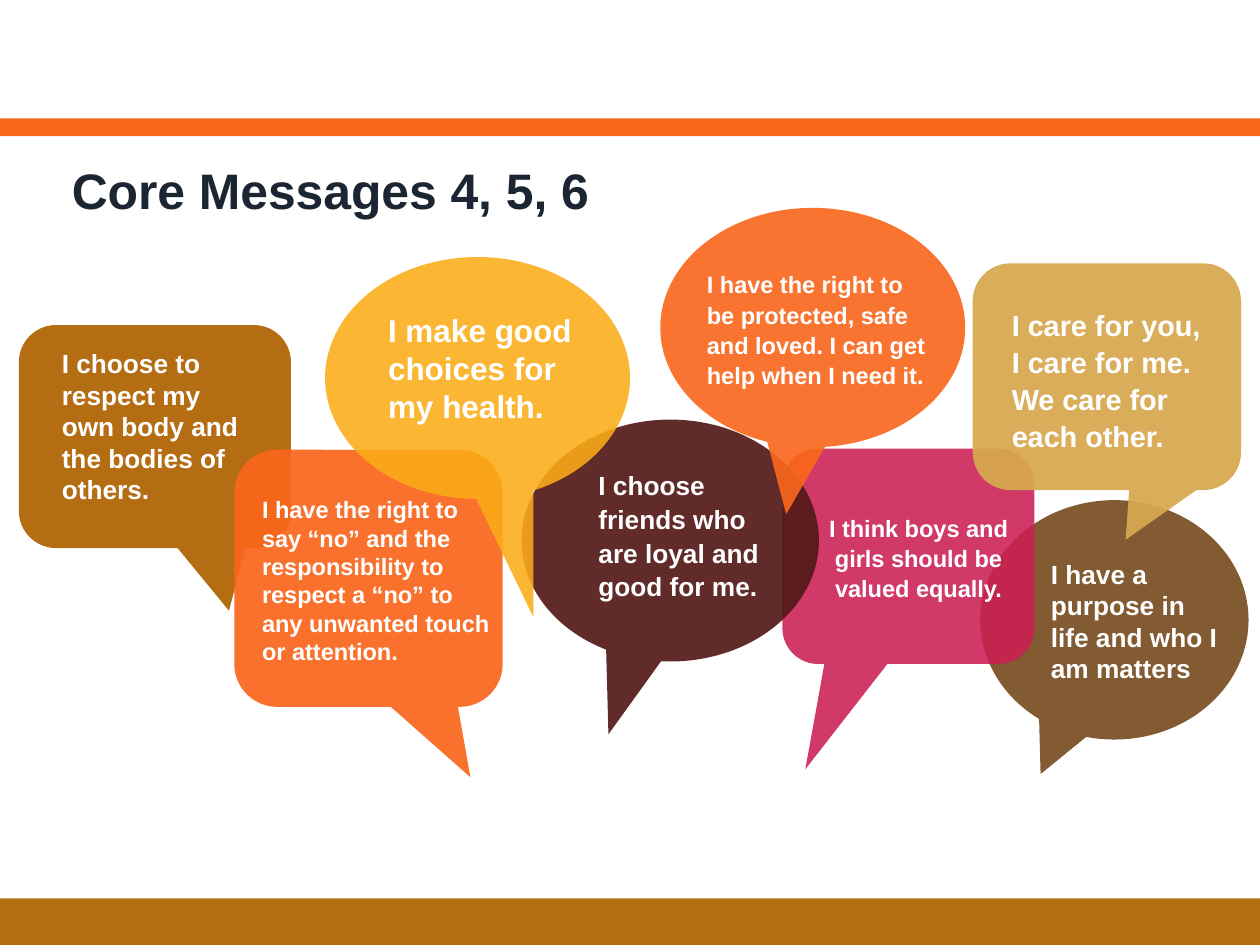
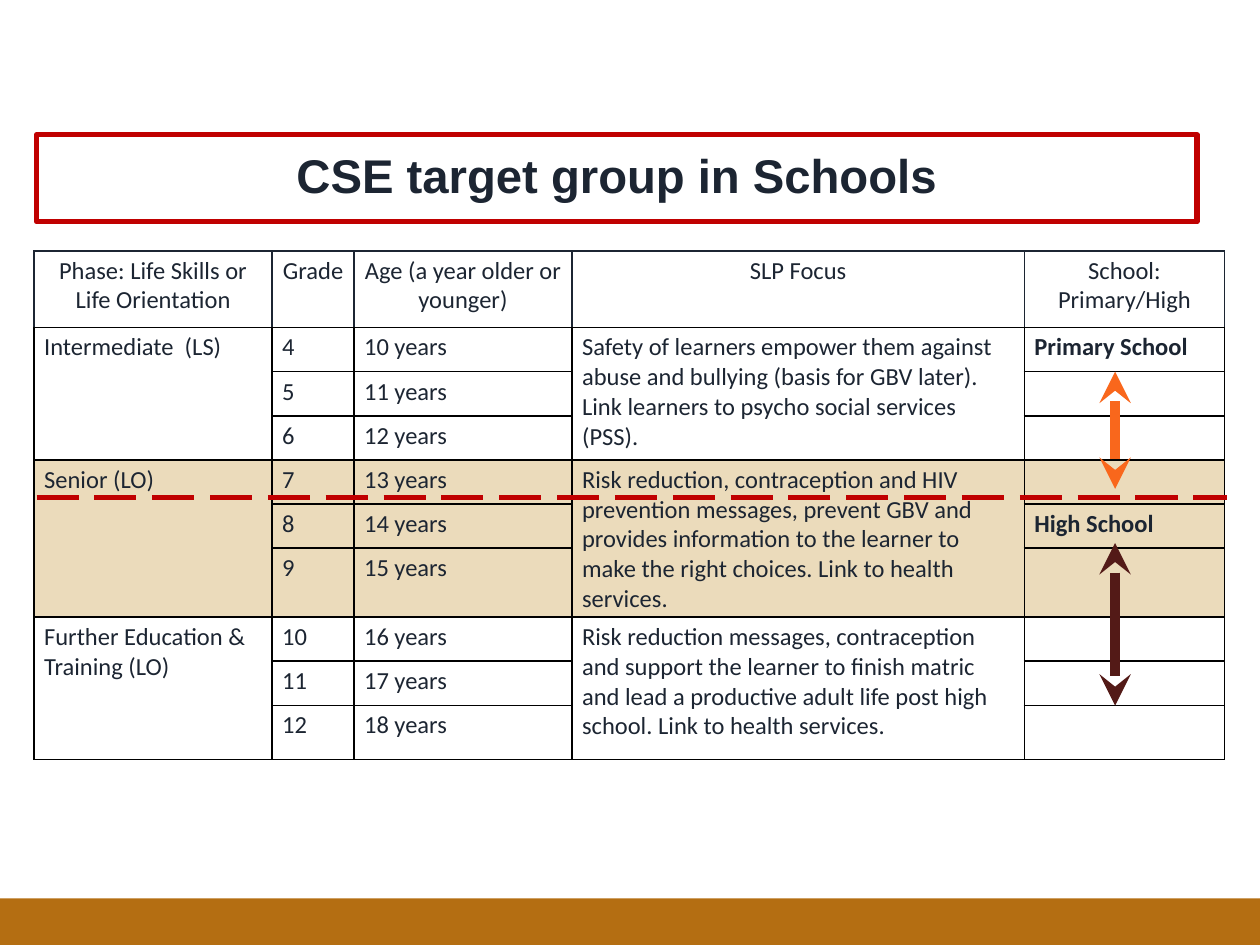
from pptx import Presentation
from pptx.dml.color import RGBColor
from pptx.enum.dml import MSO_LINE
from pptx.enum.shapes import MSO_CONNECTOR, MSO_SHAPE as SHAPE
from pptx.enum.text import MSO_ANCHOR as ANCHOR, PP_ALIGN as ALIGN
from pptx.oxml.ns import qn
from pptx.util import Inches, Pt
from lxml.etree import SubElement

# Shared colours
WHITE = RGBColor(0xFF, 0xFF, 0xFF)
BLACK = RGBColor(0x00, 0x00, 0x00)
INK = RGBColor(0x1C, 0x25, 0x32)
FOOTER = RGBColor(0xB4, 0x6E, 0x12)
OCHRE = RGBColor(0xB4, 0x6D, 0x13)
ORANGE = RGBColor(0xF9, 0x67, 0x1C)
BROWN = RGBColor(0x82, 0x5B, 0x32)
PINK = RGBColor(0xCB, 0x1F, 0x54)
SAND = RGBColor(0xD8, 0xA8, 0x51)
MAROON = RGBColor(0x53, 0x1A, 0x17)
YELLOW = RGBColor(0xFB, 0xAC, 0x18)
RED = RGBColor(0xC0, 0x00, 0x00)
CREAM = RGBColor(0xEB, 0xDB, 0xBB)

# Speech bubbles, back to front: shape, box, pointer tip, colour, opacity %
OVAL, ROUND = SHAPE.OVAL_CALLOUT, SHAPE.ROUNDED_RECTANGULAR_CALLOUT
BUBBLES = [
    (OVAL, (7.78, 3.97, 2.13, 1.9), (-0.275, 0.644), BROWN, 100),
    (ROUND, (0.15, 2.58, 2.16, 1.77), (0.272, 0.781), OCHRE, 100),
    (ROUND, (1.86, 3.57, 2.13, 2.04), (0.38, 0.774), ORANGE, 93),
    (ROUND, (6.21, 3.56, 2, 1.71), (-0.409, 0.989), PINK, 88),
    (ROUND, (7.72, 2.09, 2.13, 1.8), (0.07, 0.719), SAND, 94),
    (OVAL, (4.14, 3.33, 2.36, 1.92), (-0.208, 0.801), MAROON, 92),
    (OVAL, (5.24, 1.65, 2.42, 1.9), (-0.087, 0.78), ORANGE, 91),
    (OVAL, (2.58, 2.04, 2.42, 1.92), (0.183, 0.988), YELLOW, 88),
]
# Messages: box, size, line spacing, alignment, text
MESSAGES = [
    ((0.42, 2.72, 1.61, 1.57), 15, 1, ALIGN.LEFT,
     "I choose to respect my own body and the bodies of others."),
    ((2.01, 3.89, 2, 1.92), 13.5, 1, ALIGN.LEFT,
     "I have the right to say “no” and the responsibility to respect "
     "a “no” to any unwanted touch or attention."),
    ((3.01, 2.43, 1.64, 0.98), 18, 1, ALIGN.LEFT,
     "I make good choices for my health."),
    ((4.68, 3.67, 1.64, 1.16), 15, 1.07, ALIGN.LEFT,
     "I choose friends who are loyal and good for me."),
    ((5.54, 2.09, 1.96, 1.05), 13.5, 1.07, ALIGN.LEFT,
     "I have the right to be protected, safe and loved. I can get help when I need it."),
    ((6.47, 4.02, 1.64, 0.81), 13.5, 1.07, ALIGN.CENTER,
     "I think boys and girls should be valued equally."),
    ((7.96, 2.38, 1.95, 1.59), 16.5, 1.07, ALIGN.LEFT,
     "I care for you,\nI care for me. We care for each other."),
    ((8.27, 4.39, 1.49, 1.31), 15, 1, ALIGN.LEFT,
     "I have a purpose in life and who I am matters"),
]

# Target group table: each phase spans three grades
HEADERS = ["Phase: Life Skills or Life Orientation", "Grade",
           "Age (a year older or younger)", "SLP Focus", "School: Primary/High"]
PHASES = [
    ("Intermediate  (LS)",
     "Safety of learners empower them against abuse and bullying (basis for GBV "
     "later). Link learners to psycho social services (PSS).", None),
    ("Senior (LO)",
     "Risk reduction, contraception and HIV prevention messages, prevent GBV and "
     "provides information to the learner to make the right choices. Link to "
     "health services.", CREAM),
    ("Further Education & Training (LO)",
     "Risk reduction messages, contraception and support the learner to finish "
     "matric and lead a productive adult life post high school. Link to health "
     "services.", None),
]
FIRST_GRADE, AGE_GAP, SPAN = 4, 6, 3
SCHOOLS = {4: "Primary School", 8: "High School"}
COL_WIDTHS = [1.89, 0.65, 1.73, 3.59, 1.59]
ROW_HEIGHTS = [0.61, 0.35, 0.35, 0.35, 0.35, 0.35, 0.43, 0.35, 0.35, 0.43]
SCHOOL_ARROWS = [(2.95, 3.88, ORANGE), (4.31, 5.6, MAROON)]


def inches(box):
    return [Inches(v) for v in box]


def add_run(p, text, size, color, bold=False, font="Arial"):
    r = p.add_run()
    r.text = text
    r.font.name, r.font.size, r.font.bold = font, Pt(size), bold
    r.font.color.rgb = color


def add_filled(s, kind, box, color):
    sp = s.shapes.add_shape(kind, *inches(box))
    sp.shadow.inherit = False
    sp.fill.solid()
    sp.fill.fore_color.rgb = color
    sp.line.fill.background()
    return sp


def add_text(s, box, text, size, color, spacing=1, align=ALIGN.LEFT, anchor=ANCHOR.TOP):
    sp = s.shapes.add_textbox(*inches(box))
    tf = sp.text_frame
    tf.word_wrap = True
    tf.vertical_anchor = anchor
    tf.margin_left = tf.margin_right = Inches(0.07)
    tf.margin_top = tf.margin_bottom = Inches(0.04)
    p = tf.paragraphs[0]
    p.alignment, p.line_spacing = align, spacing
    for i, line in enumerate(text.split("\n")):
        if i:
            p.add_line_break()
        add_run(p, line, size, color, bold=True)
    return sp


def add_title(s, box, text, size, **kw):
    return add_text(s, box, text, size, INK, 0.9, **kw)


def add_line(s, start, end, color, width):
    ln = s.shapes.add_connector(MSO_CONNECTOR.STRAIGHT, *inches(start + end))
    ln.line.color.rgb, ln.line.width = color, Pt(width)
    SubElement(ln._element.spPr, qn("a:effectLst"))
    return ln


def new_slide(prs):
    s = prs.slides.add_slide(prs.slide_layouts[6])
    add_filled(s, SHAPE.RECTANGLE, (0, 7.13, 10, 0.38), FOOTER)
    return s


def fill_cell(cell, text, align=ALIGN.LEFT, bold=False, fill=None, border=BLACK):
    cell.margin_left = cell.margin_right = Inches(0.08)
    cell.margin_top = cell.margin_bottom = Inches(0.04)
    p = cell.text_frame.paragraphs[0]
    p.alignment = align
    if text:
        add_run(p, text, 14, INK, bold, "Calibri")
    else:
        SubElement(p._p, qn("a:endParaRPr"), sz="1400")
    # Borders come before the fill in the cell properties
    tc_pr = cell._tc.get_or_add_tcPr()
    for side in ("lnL", "lnR", "lnT", "lnB"):
        ln = SubElement(tc_pr, qn("a:" + side), w=str(Pt(1)))
        SubElement(SubElement(ln, qn("a:solidFill")), qn("a:srgbClr"), val=str(border))
    if fill is None:
        cell.fill.background()
    else:
        cell.fill.solid()
        cell.fill.fore_color.rgb = fill


def build_messages(prs):
    s = new_slide(prs)
    add_title(s, (0.5, 1.28, 9, 0.96), "Core Messages 4, 5, 6", 28.5)
    for kind, box, tip, color, opacity in BUBBLES:
        sp = add_filled(s, kind, box, color)
        sp.adjustments[0], sp.adjustments[1] = tip
        if opacity < 100:
            clr = sp._element.spPr.find(qn("a:solidFill"))[0]
            SubElement(clr, qn("a:alpha"), val=str(opacity * 1000))
    for box, size, spacing, align, text in MESSAGES:
        add_text(s, box, text, size, WHITE, spacing, align)
    add_filled(s, SHAPE.RECTANGLE, (0, 0.94, 10, 0.14), ORANGE)


def build_target_group(prs):
    s = new_slide(prs)
    title = add_title(s, (0.29, 1.07, 9.21, 0.69), "CSE target group in Schools", 27,
                      align=ALIGN.CENTER, anchor=ANCHOR.MIDDLE)
    title.line.color.rgb, title.line.width = RED, Pt(3)

    # Table
    box = (0.27, 1.99, sum(COL_WIDTHS), sum(ROW_HEIGHTS))
    table = s.shapes.add_table(len(ROW_HEIGHTS), len(COL_WIDTHS), *inches(box)).table
    table.first_row = table.horz_banding = False
    for col, width in zip(table.columns, COL_WIDTHS):
        col.width = Inches(width)
    for row, height in zip(table.rows, ROW_HEIGHTS):
        row.height = Inches(height)
    for c, text in enumerate(HEADERS):
        fill_cell(table.cell(0, c), text, ALIGN.CENTER, border=INK)
    for i in range(len(PHASES) * SPAN):
        phase, focus, fill = PHASES[i // SPAN]
        if i % SPAN:
            phase = focus = ""
        grade = FIRST_GRADE + i
        values = [phase, str(grade), f"{grade + AGE_GAP} years", focus,
                  SCHOOLS.get(grade, "")]
        for c, text in enumerate(values):
            fill_cell(table.cell(i + 1, c), text, bold=c == 4, fill=fill)
    for top in range(1, len(ROW_HEIGHTS), SPAN):
        for c in (0, 3):
            table.cell(top, c).merge(table.cell(top + SPAN - 1, c))

    # School ranges and the line between primary and high school
    for top, bottom, color in SCHOOL_ARROWS:
        arrow = add_line(s, (8.85, top), (8.85, bottom), color, 6)
        for end in ("headEnd", "tailEnd"):
            SubElement(arrow.line._get_or_add_ln(), qn("a:" + end), type="stealth")
    divider = add_line(s, (0.29, 3.95), (9.74, 3.95), RED, 3)
    divider.line.dash_style = MSO_LINE.LONG_DASH


def main():
    prs = Presentation()
    prs.slide_width, prs.slide_height = Inches(10), Inches(7.5)
    build_messages(prs)
    build_target_group(prs)
    prs.save("out.pptx")


if __name__ == "__main__":
    main()
